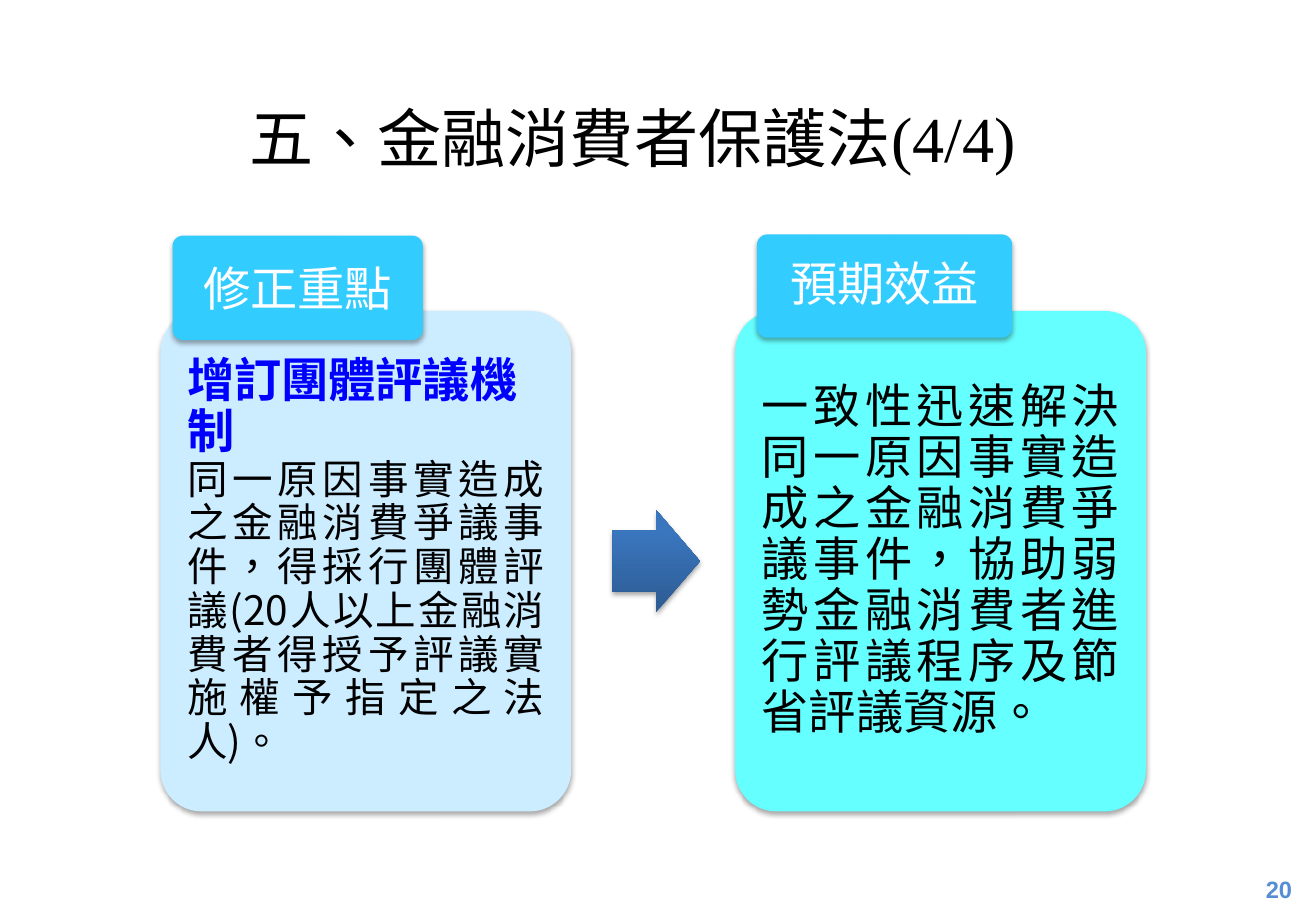
from lxml.etree import SubElement
from pptx import Presentation
from pptx.dml.color import RGBColor
from pptx.enum.shapes import MSO_SHAPE
from pptx.enum.text import MSO_ANCHOR, PP_ALIGN
from pptx.oxml.ns import qn
from pptx.util import Pt

PX = 9144
TITLE_ONLY = 5
SERIF, SANS, PLAIN = "Times New Roman", "Noto Sans CJK SC", "Arial"
BLACK = RGBColor(0x00, 0x00, 0x00)
WHITE = RGBColor(0xFF, 0xFF, 0xFF)
BLUE = RGBColor(0x00, 0x00, 0xFF)
NUMBER_BLUE = RGBColor(0x55, 0x8E, 0xD5)
PALE_BLUE = RGBColor(0xCC, 0xEC, 0xFF)
AQUA = RGBColor(0x66, 0xFF, 0xFF)
SKY = RGBColor(0x33, 0xCC, 0xFF)
ARROW_DARK = RGBColor(0x2D, 0x5B, 0x92)
ARROW_LIGHT = RGBColor(0x3A, 0x76, 0xBE)

HEADING = {"size": Pt(28), "name": SANS, "bold": True, "color": BLUE}
DETAIL = {"size": Pt(24), "name": SANS, "bold": False, "color": BLACK}
BENEFIT = {**DETAIL, "size": Pt(28)}
BADGE = {"size": Pt(28), "name": SERIF, "color": WHITE}
TITLE = {"size": Pt(38), "name": SERIF, "color": BLACK}
NUMBER = {"size": Pt(14), "name": PLAIN, "bold": True, "color": NUMBER_BLUE}


def scaled(*lengths):
    """Turn px lengths into EMU."""
    return [length * PX for length in lengths]


def write(frame, paragraphs, margins, anchor=MSO_ANCHOR.MIDDLE):
    """Fill a text frame with (text, alignment, line spacing, format) entries."""
    settings = {"word_wrap": True, "vertical_anchor": anchor}
    sides = ("margin_left", "margin_top", "margin_right", "margin_bottom")
    settings.update(zip(sides, scaled(*margins)))
    for key, value in settings.items():
        setattr(frame, key, value)
    for index, (text, alignment, spacing, style) in enumerate(paragraphs):
        para = frame.add_paragraph() if index else frame.paragraphs[0]
        para.alignment, para.line_spacing = alignment, spacing
        span = para.add_run()
        span.text = text
        for key, value in style.items():
            if key == "color":
                span.font.color.rgb = value
            else:
                setattr(span.font, key, value)
        properties = span.font._element
        properties.set("lang", "zh-TW")
        SubElement(properties, qn("a:ea"), typeface=SANS)


def add_shadowed(page, kind, box, adjustments):
    """Add a borderless shape with a soft shadow below it."""
    shape = page.shapes.add_shape(kind, *scaled(*box))
    for index, value in enumerate(adjustments):
        shape.adjustments[index] = value
    shape.line.fill.background()
    shape.shadow.inherit = False
    effects = shape._element.spPr.find(qn("a:effectLst"))
    shadow = SubElement(effects, qn("a:outerShdw"), blurRad=str(Pt(3.1)),
                        dist=str(Pt(1.8)), dir="5400000", rotWithShape="0")
    color = SubElement(shadow, qn("a:srgbClr"), val="000000")
    SubElement(color, qn("a:alpha"), val="35000")
    return shape


def add_panel(page, box, fill, paragraphs, margins):
    """Add a rounded panel with text."""
    panel = add_shadowed(page, MSO_SHAPE.ROUNDED_RECTANGLE, box, [0.1])
    panel.fill.solid()
    panel.fill.fore_color.rgb = fill
    write(panel.text_frame, paragraphs, margins)


def add_card(page, box, fill, paragraphs, badge_text, badge_box, badge_spacing):
    """Add a card and the badge that overlaps its top edge."""
    left, top, width, height = box
    shift, rise, badge_width, badge_height = badge_box
    add_panel(page, box, fill, paragraphs, (12, 12, 12, 12))
    add_panel(page, (left + shift, top - rise, badge_width, badge_height), SKY,
              [(badge_text, PP_ALIGN.CENTER, badge_spacing, BADGE)], (6, 4, 6, 4))


def add_arrow(page, box):
    """Add the gradient arrow between the cards."""
    arrow = add_shadowed(page, MSO_SHAPE.RIGHT_ARROW, box, [0.6, 0.5])
    arrow.fill.gradient()
    arrow.fill.gradient_angle = 90
    stops = zip(arrow.fill.gradient_stops, (0, 0.8), (ARROW_DARK, ARROW_LIGHT))
    for stop, position, color in stops:
        stop.position, stop.color.rgb = position, color


def add_title(page, box):
    """Move and fill the title placeholder."""
    title = page.shapes.title
    title.left, title.top, title.width, title.height = scaled(*box)
    write(title.text_frame,
          [("五、金融消費者保護法(4/4)", PP_ALIGN.JUSTIFY, 1.0, TITLE)],
          (10, 5, 10, 5), MSO_ANCHOR.TOP)


def add_page_number(page, box):
    """Add the page number in the corner."""
    number = page.shapes.add_textbox(*scaled(*box))
    write(number.text_frame, [("20", PP_ALIGN.CENTER, 1.0, NUMBER)], (10, 5, 10, 5))


def main():
    """Build and save the deck."""
    deck = Presentation()
    deck.slide_width, deck.slide_height = scaled(1083, 750)
    page = deck.slides.add_slide(deck.slide_layouts[TITLE_ONLY])
    add_title(page, (195, 76, 693, 74))
    add_card(page, (132, 256, 338, 412), PALE_BLUE, [
        ("增訂團體評議機制", PP_ALIGN.LEFT, 0.9, HEADING),
        ("同一原因事實造成之金融消費爭議事件，得採行團體評議(20人以上金融消費者得授予評議實施權予指定之法人)。",
         PP_ALIGN.JUSTIFY, 0.9, DETAIL),
    ], "修正重點", (10, 62, 206, 86), 1.0)
    add_arrow(page, (504, 420, 72, 84))
    add_card(page, (605, 256, 338, 412), AQUA, [
        ("一致性迅速解決同一原因事實造成之金融消費爭議事件，協助弱勢金融消費者進行評議程序及節省評議資源。",
         PP_ALIGN.JUSTIFY, 0.9, BENEFIT),
    ], "預期效益", (18, 63, 210, 85), 0.9)
    add_page_number(page, (1022, 714, 61, 36))
    deck.save("out.pptx")


if __name__ == "__main__":
    main()
